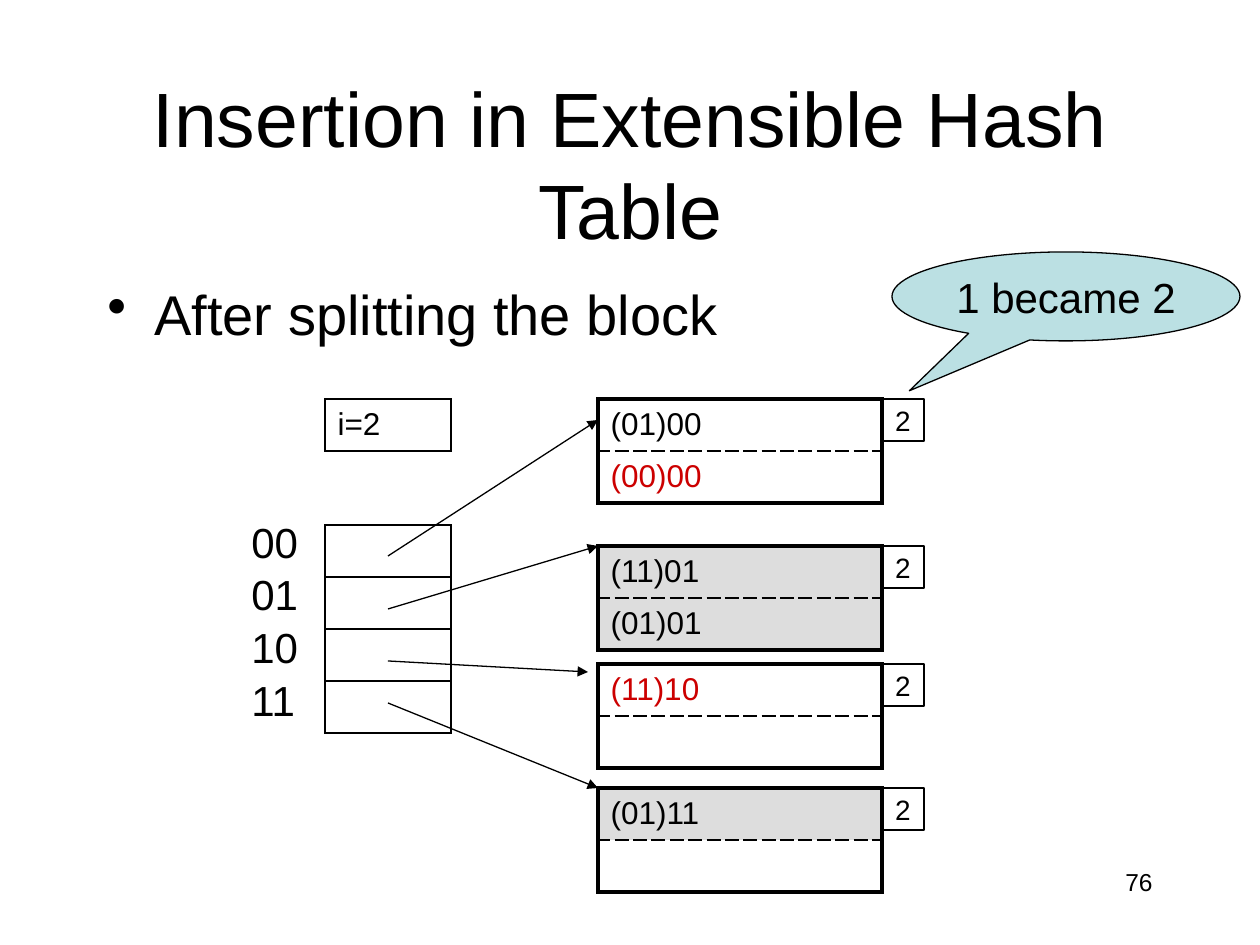
"""Build the extensible hash table insertion slide."""
from lxml import etree
from pptx import Presentation
from pptx.dml.color import RGBColor
from pptx.enum.shapes import MSO_CONNECTOR, MSO_SHAPE
from pptx.enum.text import MSO_ANCHOR, MSO_AUTO_SIZE, PP_ALIGN
from pptx.oxml import parse_xml
from pptx.oxml.ns import nsdecls, qn
from pptx.util import Emu, Pt

BLACK = RGBColor(0x00, 0x00, 0x00)
RED = RGBColor(0xCC, 0x00, 0x00)
GRAY = RGBColor(0xDD, 0xDD, 0xDD)
AQUA = RGBColor(0xBB, 0xE0, 0xE3)
PX = 914400 / 126
ROW_H = 52


def set_text(shape, text, size, align=PP_ALIGN.LEFT, color=BLACK):
    tf = shape.text_frame
    tf.text = text
    p = tf.paragraphs[0]
    p.alignment = align
    p.font.name = "Arial"
    p.font.size = Pt(size)
    p.font.color.rgb = color
    return tf


def add_grid(x, y, w, rows, edge, dash="solid"):
    box = [Emu(round(v * PX)) for v in (x, y, w, ROW_H * len(rows))]
    table = s.shapes.add_table(len(rows), 1, *box).table
    table.first_row = table.horz_banding = False
    last = len(rows) - 1
    for i, (text, color, fill) in enumerate(rows):
        table.rows[i].height = Emu(round(ROW_H * PX))
        cell = table.cell(i, 0)
        cell.vertical_anchor = MSO_ANCHOR.MIDDLE
        set_text(cell, text, 18, color=color)
        if fill:
            cell.fill.solid()
            cell.fill.fore_color.rgb = fill
        else:
            cell.fill.background()
        inner = (1, dash)
        outer = (edge, "solid")
        sides = {"L": outer, "R": outer,
                 "T": inner if i else outer,
                 "B": inner if i < last else outer}
        for n, (side, (width, style)) in enumerate(sides.items()):
            cell._tc.get_or_add_tcPr().insert(n, parse_xml(
                f'<a:ln{side} {nsdecls("a")} w="{Pt(width)}"><a:solidFill>'
                f'<a:srgbClr val="{BLACK}"/></a:solidFill>'
                f'<a:prstDash val="{style}"/></a:ln{side}>'))


prs = Presentation()
prs.slide_width, prs.slide_height = Emu(round(1260 * PX)), Emu(round(945 * PX))
s = prs.slides.add_slide(prs.slide_layouts[5])

title = s.shapes.title
title.left, title.top, title.width, title.height = [
    Emu(round(v * PX)) for v in (95, 84, 1071, 158)]
tf = set_text(title, "Insertion in Extensible Hash Table", 44, PP_ALIGN.CENTER)
tf.vertical_anchor = MSO_ANCHOR.MIDDLE
tf.auto_size = MSO_AUTO_SIZE.NONE

texts = [("After splitting the block", 95, 273, 1071, 567, 32, PP_ALIGN.LEFT),
         ("76", 903, 861, 262, 63, 14, PP_ALIGN.RIGHT)]
for i, label in enumerate(("00", "01", "10", "11")):
    texts.append((label, 239, 510 + round(52.5 * i), 73, 64, 24, PP_ALIGN.LEFT))
for text, x, y, w, h, size, align in texts:
    tb = s.shapes.add_textbox(*[Emu(round(v * PX)) for v in (x, y, w, h)])
    tf = set_text(tb, text, size, align)
    tf.word_wrap = True
    if size == 32:
        p = tf.paragraphs[0]
        p.space_before = Pt(3)
        pPr = p._p.get_or_add_pPr()
        pPr.set("marL", str(round(47 * PX)))
        pPr.set("indent", str(round(-47 * PX)))
        bullet = etree.Element(qn("a:buChar"), char="•")
        pPr.find(qn("a:defRPr")).addprevious(bullet)

add_grid(325, 399, 126, [("i=2", BLACK, None)], 1)
add_grid(325, 525, 126, [("", BLACK, None)] * 4, 1)

blocks = [(399, [("(01)00", BLACK, None), ("(00)00", RED, None)]),
          (546, [("(11)01", BLACK, GRAY), ("(01)01", BLACK, GRAY)]),
          (664, [("(11)10", RED, None), ("", BLACK, None)]),
          (788, [("(01)11", BLACK, GRAY), ("", BLACK, None)])]
for y, rows in blocks:
    add_grid(598, y, 284, rows, 2.25, "lgDash")

shapes = [(MSO_SHAPE.RECTANGLE, "2", 882, y, 42, 42, 16, None) for y, _ in blocks]
shapes.append((MSO_SHAPE.OVAL_CALLOUT, "1 became 2", 892, 252, 348, 89, 24, AQUA))
for kind, text, x, y, w, h, size, fill in shapes:
    sp = s.shapes.add_shape(kind, *[Emu(round(v * PX)) for v in (x, y, w, h)])
    sp.shadow.inherit = False
    sp.line.color.rgb = BLACK
    sp.line.width = Pt(0.75)
    if fill:
        sp.fill.solid()
        sp.fill.fore_color.rgb = fill
        sp.adjustments[0], sp.adjustments[1] = -0.45, 1.06
    else:
        sp.fill.background()
    tf = set_text(sp, text, size, PP_ALIGN.CENTER)
    tf.vertical_anchor = MSO_ANCHOR.MIDDLE
    tf.word_wrap = False

for y1, x2, y2 in ((556, 598, 420), (609, 598, 546), (661, 588, 672), (703, 598, 788)):
    ends = [Emu(round(v * PX)) for v in (388, y1, x2, y2)]
    arrow = s.shapes.add_connector(MSO_CONNECTOR.STRAIGHT, *ends)
    arrow.line.color.rgb = BLACK
    arrow.line.width = Pt(0.75)
    etree.SubElement(arrow.line._get_or_add_ln(), qn("a:tailEnd"), type="triangle")
    etree.SubElement(arrow._element.spPr, qn("a:effectLst"))

prs.save("out.pptx")
